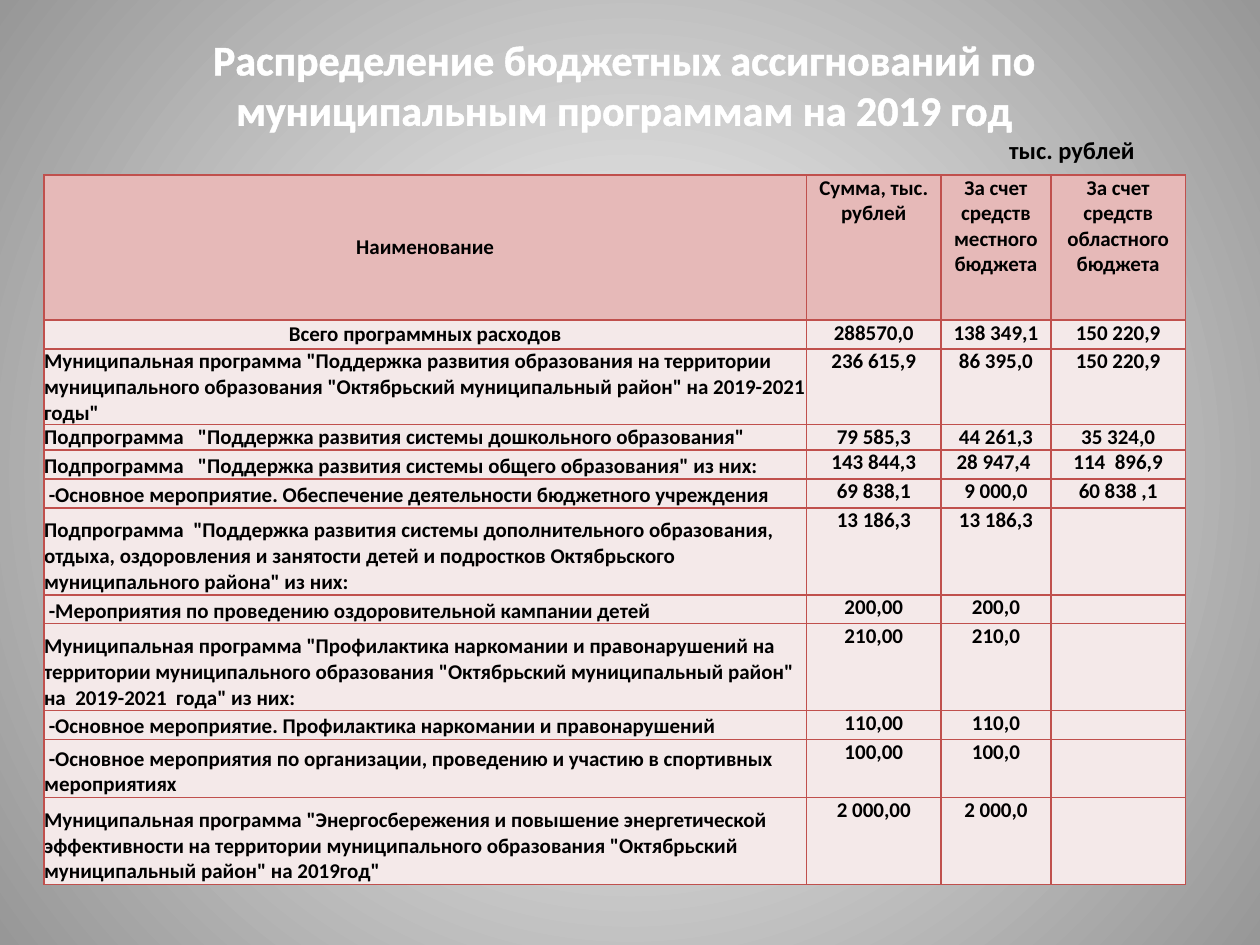
from typing import NamedTuple

from lxml.etree import SubElement
from pptx import Presentation
from pptx.dml.color import RGBColor
from pptx.enum.text import MSO_ANCHOR as Anchor, MSO_AUTO_SIZE as AutoSize, PP_ALIGN as Align
from pptx.oxml.ns import qn
from pptx.util import Inches, Pt

WHITE = RGBColor(0xFF, 0xFF, 0xFF)
BLACK = RGBColor(0x00, 0x00, 0x00)
GREY = RGBColor(0x97, 0x97, 0x97)
RED = RGBColor(0xC0, 0x50, 0x4D)
HEADER_PINK = RGBColor(0xE6, 0xB9, 0xB8)
BODY_PINK = RGBColor(0xF4, 0xE9, 0xE9)

FONT = "Calibri"
COLUMN_WIDTHS = (6.05, 1.07, 0.87, 1.07)


class Box(NamedTuple):
    left: float
    top: float
    width: float
    height: float

    def lengths(self) -> tuple:
        return tuple(Inches(value) for value in self)


class BudgetRow(NamedTuple):
    height: float
    name: str
    total: str
    local: str
    regional: str = ""
    name_align: Align = Align.LEFT
    name_anchor: Anchor = Anchor.BOTTOM
    fill: RGBColor = BODY_PINK


TITLE_BOX = Box(0.35, 0.21, 9.21, 0.91)
UNIT_BOX = Box(7.91, 1.02, 1.21, 0.34)
TABLE_LEFT, TABLE_TOP = 0.35, 1.39

ROWS = (
    BudgetRow(1.15, "Наименование", "Сумма, тыс. рублей", "За счет средств местного бюджета",
              "За счет средств областного бюджета", Align.CENTER, Anchor.MIDDLE, HEADER_PINK),
    BudgetRow(0.23, "Всего программных расходов", "288570,0", "138 349,1", "150 220,9",
              Align.CENTER, Anchor.MIDDLE),
    BudgetRow(0.6, 'Муниципальная программа "Поддержка развития образования на территории '
              'муниципального образования "Октябрьский муниципальный район" на 2019-2021 годы"',
              "236 615,9", "86 395,0", "150 220,9"),
    BudgetRow(0.2, 'Подпрограмма   "Поддержка развития системы дошкольного образования"',
              "79 585,3", "44 261,3", "35 324,0"),
    BudgetRow(0.23, 'Подпрограмма   "Поддержка развития системы общего образования" из них:',
              "143 844,3", "28 947,4 ", "114  896,9"),
    BudgetRow(0.23, " -Основное мероприятие. Обеспечение деятельности бюджетного учреждения",
              "69 838,1", "9 000,0", "60 838 ,1"),
    BudgetRow(0.69, 'Подпрограмма  "Поддержка развития системы дополнительного образования, '
              'отдыха, оздоровления и занятости детей и подростков Октябрьского '
              'муниципального района" из них:', "13 186,3", "13 186,3"),
    BudgetRow(0.23, " -Мероприятия по проведению оздоровительной кампании детей",
              "200,00", "200,0"),
    BudgetRow(0.69, 'Муниципальная программа "Профилактика наркомании и правонарушений на '
              'территории муниципального образования "Октябрьский муниципальный район" '
              'на  2019-2021  года" из них:', "210,00", "210,0"),
    BudgetRow(0.23, " -Основное мероприятие. Профилактика наркомании и правонарушений",
              "110,00", "110,0"),
    BudgetRow(0.46, " -Основное мероприятия по организации, проведению и участию в спортивных "
              "мероприятиях", "100,00", "100,0"),
    BudgetRow(0.69, 'Муниципальная программа "Энергосбережения и повышение энергетической '
              'эффективности на территории муниципального образования "Октябрьский '
              'муниципальный район" на 2019год"', "2 000,00", "2 000,0"),
)


def style_paragraph(para, size: float, color: RGBColor, align: Align) -> None:
    para.alignment = align
    para.font.name = FONT
    para.font.size = Pt(size)
    para.font.bold = True
    para.font.color.rgb = color


def add_line(parent, tag: str, color: RGBColor, width: float):
    """Append a solid line of the given tag to an XML element."""
    line = SubElement(parent, qn(tag), w=str(Pt(width)))
    fill = SubElement(line, qn("a:solidFill"))
    SubElement(fill, qn("a:srgbClr"), val=str(color))
    return line


def paint_background(page) -> None:
    """Fill the page with a circular gradient around its centre."""
    fill = page.background.fill
    fill.gradient()
    for stop, color, position in zip(fill.gradient_stops, (WHITE, GREY), (0, 1)):
        stop.color.rgb = color
        stop.position = position
    gradient = page.background._cSld.find(".//" + qn("a:gradFill"))
    gradient.remove(gradient.find(qn("a:lin")))
    path = SubElement(gradient, qn("a:path"), {"path": "circle"})
    SubElement(path, qn("a:fillToRect"), l="50000", t="50000", r="50000", b="50000")


def add_title(page, text: str) -> None:
    title = page.shapes.title
    title.left, title.top, title.width, title.height = TITLE_BOX.lengths()
    frame = title.text_frame
    frame.text = text
    frame.word_wrap = True
    frame.auto_size = AutoSize.SHAPE_TO_FIT_TEXT
    para = frame.paragraphs[0]
    style_paragraph(para, 24, WHITE, Align.CENTER)
    add_line(para.runs[0].font._element, "a:ln", WHITE, 1.45)


def add_unit_label(page, text: str) -> None:
    frame = page.shapes.add_textbox(*UNIT_BOX.lengths()).text_frame
    frame.text = text
    frame.word_wrap = False
    frame.auto_size = AutoSize.SHAPE_TO_FIT_TEXT
    style_paragraph(frame.paragraphs[0], 14, BLACK, Align.LEFT)


def format_cell(cell, text: str, align: Align, anchor: Anchor, fill: RGBColor) -> None:
    cell.text = text
    cell.margin_left = cell.margin_right = cell.margin_top = cell.margin_bottom = 0
    cell.vertical_anchor = anchor
    para = cell.text_frame.paragraphs[0]
    style_paragraph(para, 12, BLACK, align)
    if not text:
        SubElement(para._p, qn("a:endParaRPr"), sz="1200")
    properties = cell._tc.get_or_add_tcPr()
    for side in ("a:lnL", "a:lnR", "a:lnT", "a:lnB"):
        add_line(properties, side, RED, 1)
    cell.fill.solid()
    cell.fill.fore_color.rgb = fill


def add_budget_table(page) -> None:
    box = Box(TABLE_LEFT, TABLE_TOP, sum(COLUMN_WIDTHS), sum(row.height for row in ROWS))
    table = page.shapes.add_table(len(ROWS), len(COLUMN_WIDTHS), *box.lengths()).table
    table.horz_banding = False
    for column, width in zip(table.columns, COLUMN_WIDTHS):
        column.width = Inches(width)
    for table_row, row in zip(table.rows, ROWS):
        table_row.height = Inches(row.height)
        name_cell, *amount_cells = table_row.cells
        format_cell(name_cell, row.name, row.name_align, row.name_anchor, row.fill)
        for cell, amount in zip(amount_cells, (row.total, row.local, row.regional)):
            format_cell(cell, amount, Align.CENTER, Anchor.TOP, row.fill)


def main() -> None:
    deck = Presentation()
    deck.slide_width, deck.slide_height = Inches(10), Inches(7.5)
    page = deck.slides.add_slide(deck.slide_layouts[5])
    paint_background(page)
    add_title(page, "Распределение бюджетных ассигнований по муниципальным программам на 2019 год")
    add_budget_table(page)
    add_unit_label(page, "тыс. рублей")
    deck.save("out.pptx")


if __name__ == "__main__":
    main()
